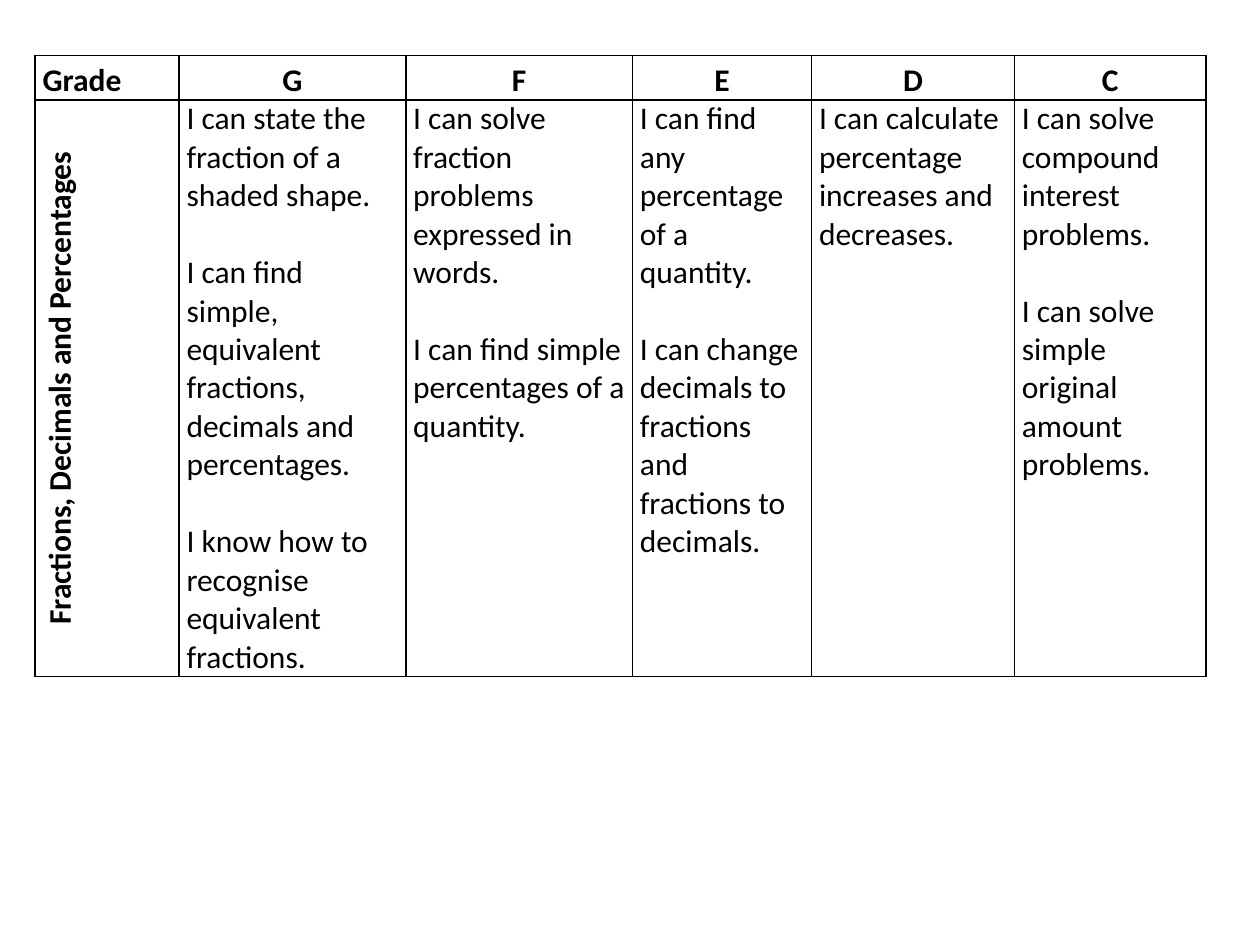
from dataclasses import dataclass

from lxml.etree import SubElement
from pptx import Presentation
from pptx.dml.color import RGBColor
from pptx.enum.text import MSO_ANCHOR, PP_ALIGN
from pptx.oxml.ns import qn
from pptx.table import _Cell as Cell
from pptx.util import Cm, Pt

BLACK = RGBColor(0, 0, 0)
WHITE = RGBColor(255, 255, 255)
FONT = "Calibri"
TOPIC = "Fractions, Decimals and Percentages"
HEAD_HIGH, BODY_HIGH = Cm(0.88), Cm(11.6)


@dataclass
class Grade:
    name: str
    width: Cm
    goals: list[str]


GRADES = [
    Grade("G", Cm(4.57), [
        "I can state the fraction of a shaded shape.",
        "I can find simple, equivalent fractions, decimals and percentages.",
        "I know how to recognise equivalent fractions.",
    ]),
    Grade("F", Cm(4.57), [
        "I can solve fraction problems expressed in words.",
        "I can find simple percentages of a quantity.",
    ]),
    Grade("E", Cm(3.61), [
        "I can find any percentage of a quantity.",
        "I can change decimals to fractions and fractions to decimals.",
    ]),
    Grade("D", Cm(4.09), [
        "I can calculate percentage increases and decreases.",
    ]),
    Grade("C", Cm(3.86), [
        "I can solve compound interest problems.",
        "I can solve simple original amount problems.",
    ]),
]


def write(cell: Cell, lines: list[str], *, bold: bool = False,
          align: PP_ALIGN = PP_ALIGN.LEFT, pitch: float = 1.0,
          gap: Pt = Pt(0)) -> None:
    """Fill a cell with one paragraph a line, set apart by the gap."""
    frame = cell.text_frame
    for i, line in enumerate(lines):
        para = frame.add_paragraph() if i else frame.paragraphs[0]
        para.alignment = align
        para.line_spacing = pitch
        para.space_before = gap if i else Pt(0)
        run = para.add_run()
        run.text = line
        font = run.font
        font.name, font.size, font.bold = FONT, Pt(18), bold
        font.color.rgb = BLACK


def style(cell: Cell) -> None:
    """Set the margins, white fill and black borders of a cell."""
    cell.margin_left = cell.margin_right = Cm(0.15)
    cell.margin_top = cell.margin_bottom = 0
    cell.vertical_anchor = MSO_ANCHOR.TOP
    cell.fill.solid()
    cell.fill.fore_color.rgb = WHITE
    props = cell._tc.get_or_add_tcPr()
    for i, side in enumerate(("a:lnL", "a:lnR", "a:lnT", "a:lnB")):
        edge = SubElement(props, qn(side), w=str(Pt(1)))
        fill = SubElement(edge, qn("a:solidFill"))
        SubElement(fill, qn("a:srgbClr"), val=str(BLACK))
        props.insert(i, edge)


def main() -> None:
    deck = Presentation()
    deck.slide_width, deck.slide_height = Cm(25.4), Cm(19.05)
    slide = deck.slides.add_slide(deck.slide_layouts[6])

    widths = [Cm(2.9)] + [grade.width for grade in GRADES]
    table = slide.shapes.add_table(
        2, len(widths), Cm(0.71), Cm(1.12), sum(widths),
        HEAD_HIGH + BODY_HIGH).table
    table.first_row = table.horz_banding = False
    table.rows[0].height, table.rows[1].height = HEAD_HIGH, BODY_HIGH
    for col, width in zip(table.columns, widths):
        col.width = width
    for cell in table.iter_cells():
        style(cell)

    head = {"bold": True, "pitch": 1.15}
    write(table.cell(0, 0), ["Grade"], **head)
    topic = table.cell(1, 0)
    topic._tc.get_or_add_tcPr().set("vert", "vert270")
    write(topic, [TOPIC], align=PP_ALIGN.CENTER, **head)
    for i, grade in enumerate(GRADES, 1):
        write(table.cell(0, i), [grade.name], align=PP_ALIGN.CENTER, **head)
        write(table.cell(1, i), grade.goals, gap=Pt(22))

    deck.save("out.pptx")


if __name__ == "__main__":
    main()
